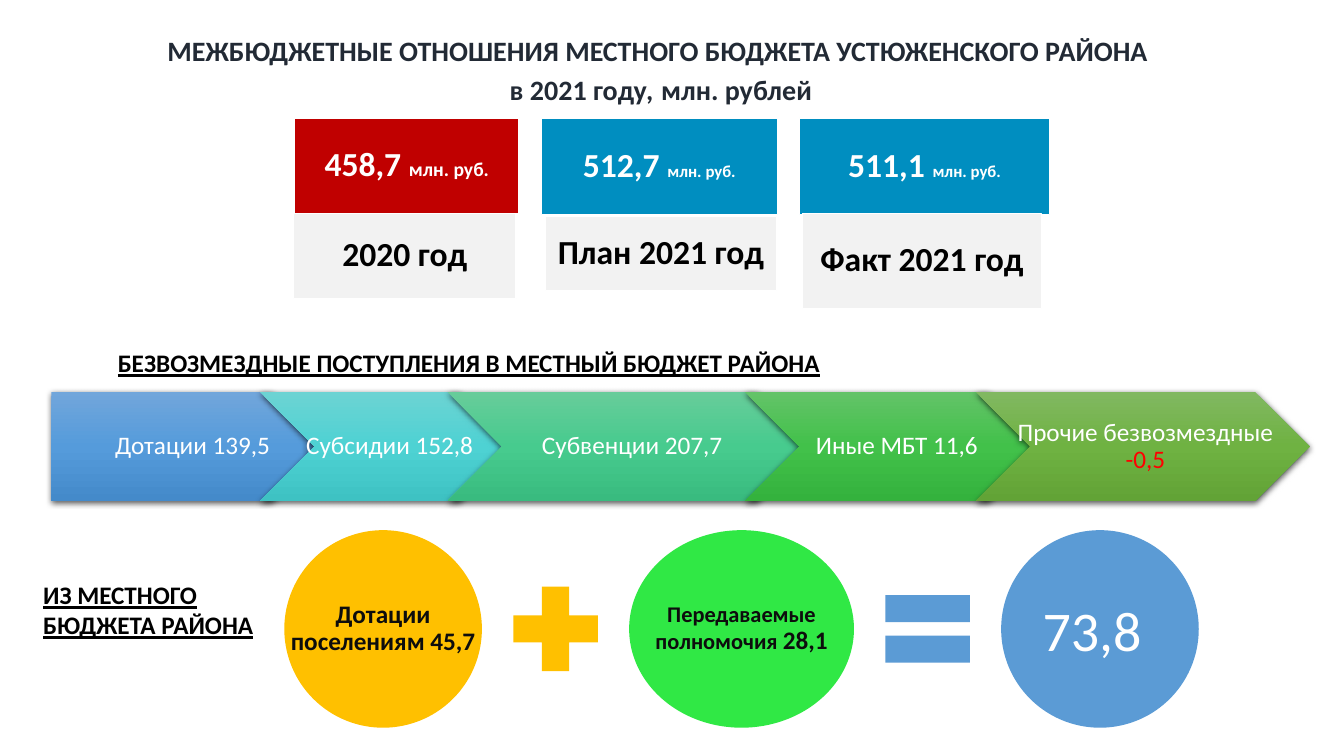
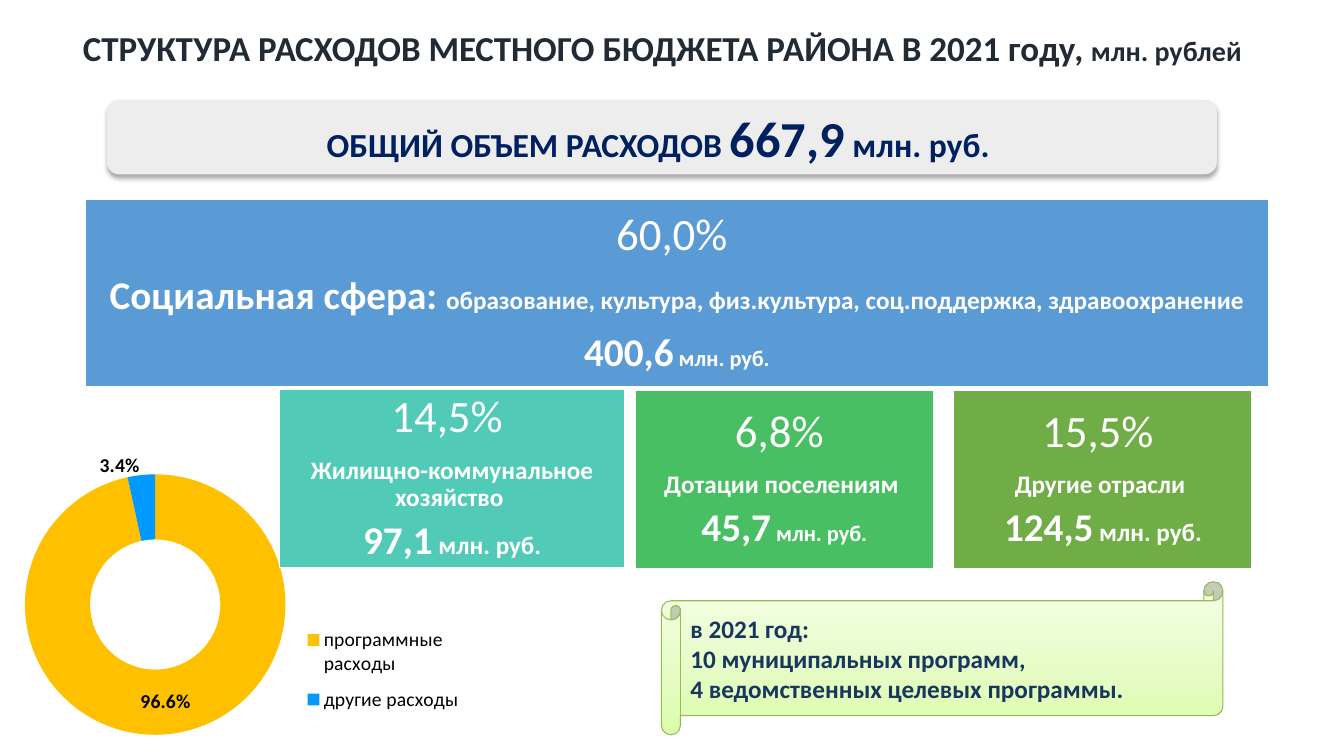
from dataclasses import dataclass

import lxml.etree
import pptx
import pptx.chart.data
import pptx.dml.color
import pptx.enum.chart
import pptx.enum.shapes
import pptx.enum.text
import pptx.oxml.ns
import pptx.util

Inches = pptx.util.Inches
Pt = pptx.util.Pt
SHAPE = pptx.enum.shapes.MSO_SHAPE
ALIGN = pptx.enum.text.PP_ALIGN
ANCHOR = pptx.enum.text.MSO_ANCHOR
qn = pptx.oxml.ns.qn

FONT = "Calibri"
WHITE = "FFFFFF"
BLACK = "000000"
TITLE_COLOR = "222A35"
BLUE = "5B9BD5"
AMBER = "FFC000"
MILLION = "млн. руб."


@dataclass
class Run:
    text: str
    size: float
    color: str = WHITE
    bold: bool = True
    underline: bool = False


def rgb(color):
    return pptx.dml.color.RGBColor.from_string(color)


def box(left, top, width, height):
    return Inches(left), Inches(top), Inches(width), Inches(height)


def add_element(parent, tag, **attributes):
    element = lxml.etree.SubElement(parent, qn(tag))
    for name, value in attributes.items():
        element.set(name, str(value))
    return element


def write(text_frame, paragraphs, align=ALIGN.CENTER, compact=False):
    """Fill a frame with lists of runs; compact is the tight diagram spacing."""
    for index, runs in enumerate(paragraphs):
        paragraph = text_frame.paragraphs[0] if index == 0 else text_frame.add_paragraph()
        paragraph.alignment = align
        if compact:
            paragraph.line_spacing = 0.9
            if index < len(paragraphs) - 1:
                paragraph.space_after = Pt(round(0.35 * max(run.size for run in runs)))
        for run in runs:
            for line_index, line in enumerate(run.text.split("\n")):
                if line_index:
                    paragraph.add_line_break()
                text_run = paragraph.add_run()
                text_run.text = line
                font = text_run.font
                font.name, font.size = FONT, Pt(run.size)
                font.bold, font.underline = run.bold, run.underline
                font.color.rgb = rgb(run.color)


def add_title(slide, position, paragraphs):
    title = slide.shapes.title
    title.left, title.top, title.width, title.height = box(*position)
    frame = title.text_frame
    frame.auto_size = pptx.enum.text.MSO_AUTO_SIZE.NONE
    frame.vertical_anchor = ANCHOR.TOP
    write(frame, paragraphs)


def add_heading(slide, position, lines):
    frame = slide.shapes.add_textbox(*box(*position)).text_frame
    frame.word_wrap = True
    write(frame, [[Run(line, 18, BLACK, underline=True)] for line in lines], ALIGN.LEFT)


def add_figure(slide, kind, position, fill=None, line=None, line_width=1):
    shape = slide.shapes.add_shape(kind, *box(*position))
    shape.shadow.inherit = False
    if fill:
        shape.fill.solid()
        shape.fill.fore_color.rgb = rgb(fill)
    if line:
        shape.line.color.rgb = rgb(line)
        shape.line.width = Pt(line_width)
    else:
        shape.line.fill.background()
    shape.text_frame.vertical_anchor = ANCHOR.MIDDLE
    return shape


def set_gradient(shape, stops, angle):
    gradient = lxml.etree.Element(qn("a:gradFill"), rotWithShape="1")
    stop_list = add_element(gradient, "a:gsLst")
    for position, color in stops:
        stop = add_element(stop_list, "a:gs", pos=position * 1000)
        add_element(stop, "a:srgbClr", val=color)
    add_element(gradient, "a:lin", ang=angle * 60000, scaled=0)
    shape.element.spPr.find(qn("a:prstGeom")).addnext(gradient)


def set_shadow(shape, opacity, blur, distance):
    """Drop a black shadow straight down."""
    effects = shape.element.spPr.find(qn("a:effectLst"))
    shadow = add_element(effects, "a:outerShdw", blurRad=Pt(blur), dist=Pt(distance),
                         dir=5400000, algn="ctr", rotWithShape=0)
    color = add_element(shadow, "a:srgbClr", val=BLACK)
    add_element(color, "a:alpha", val=opacity * 1000)


def set_margins(text_frame, margin):
    text_frame.margin_left = text_frame.margin_right = Inches(margin)
    text_frame.margin_top = text_frame.margin_bottom = Inches(margin)


def add_card(slide, position, fill, paragraphs, margin=0.1):
    card = add_figure(slide, SHAPE.RECTANGLE, position, fill, WHITE)
    set_margins(card.text_frame, margin)
    write(card.text_frame, paragraphs, compact=True)


def add_circle(slide, left, width, fill, runs):
    circle = add_figure(slide, SHAPE.OVAL, (left, 5.26, width, 1.96), fill)
    circle.text_frame.word_wrap = False
    set_margins(circle.text_frame, 0.03)
    write(circle.text_frame, [runs], compact=True)


def add_arrow(slide, kind, left, width, colors, runs, left_margin):
    arrow = add_figure(slide, kind, (left, 3.89, width, 1.08))
    set_gradient(arrow, zip((0, 50, 100), colors), 90)
    set_shadow(arrow, 63, 4.5, 1.5)
    frame = arrow.text_frame
    frame.word_wrap = False
    frame.margin_left, frame.margin_right = Inches(left_margin), Inches(0.03)
    write(frame, [runs], compact=True)


def set_layout(parent, index, target=None, **measures):
    """Place a chart part by fractions of the chart's size."""
    for old_layout in parent.findall(qn("c:layout")):
        parent.remove(old_layout)
    layout = lxml.etree.Element(qn("c:layout"))
    manual = add_element(layout, "c:manualLayout")
    if target:
        add_element(manual, "c:layoutTarget", val=target)
    if "w" in measures:
        add_element(manual, "c:xMode", val="edge")
        add_element(manual, "c:yMode", val="edge")
    for name, value in measures.items():
        add_element(manual, f"c:{name}", val=value)
    parent.insert(index, layout)


def add_program_chart(slide):
    data = pptx.chart.data.CategoryChartData(number_format="0.0%")
    data.categories = ["программные расходы", "другие расходы"]
    data.add_series("Series 1", (0.966, 0.034))
    chart = slide.shapes.add_chart(pptx.enum.chart.XL_CHART_TYPE.DOUGHNUT,
                                   *box(-0.15, 4.44, 4.97, 2.94), data).chart
    chart.has_title = False
    chart.font.name, chart.font.size = FONT, Pt(18)
    chart.font.color.rgb = rgb(BLACK)
    chart.plots[0].vary_by_categories = True
    series = chart.plots[0].series[0]
    for index, color in enumerate((AMBER, "0099FF")):
        point_format = series.points[index].format
        point_format.fill.solid()
        point_format.fill.fore_color.rgb = rgb(color)
        point_format.line.fill.background()
    labels = series.data_labels
    labels.show_value = True
    labels.show_percentage = False
    labels.number_format, labels.number_format_is_linked = "0.0%", False
    for font in (labels.font, series.points[1].data_label.font):
        font.name, font.size, font.bold = FONT, Pt(14), True
        font.color.rgb = rgb(BLACK)
    chart.has_legend = True
    legend = chart.legend
    legend.position = pptx.enum.chart.XL_LEGEND_POSITION.RIGHT
    legend.include_in_layout = False
    legend.font.name, legend.font.size = FONT, Pt(14)
    legend.font.color.rgb = rgb(BLACK)
    set_layout(chart.element.xpath(".//c:plotArea")[0], 0, "inner",
               x=0.08, y=0.09, w=0.52, h=0.88)
    set_layout(chart.element.xpath(".//c:legend")[0], 1, x=0.63, y=0.57, w=0.33, h=0.36)
    set_layout(chart.element.xpath(".//c:dLbl")[0], 1, x=-0.05, y=-0.14)


def build_transfers(slide):
    add_title(slide, (0.57, 0.28, 11.97, 0.84), [
        [Run("МЕЖБЮДЖЕТНЫЕ ОТНОШЕНИЯ МЕСТНОГО БЮДЖЕТА УСТЮЖЕНСКОГО РАЙОНА ", 20, TITLE_COLOR)],
        [Run("в 2021 году,", 20, TITLE_COLOR), Run(" ", 24, TITLE_COLOR),
         Run("млн. рублей", 20, TITLE_COLOR)]])

    amounts = [((2.92, 1.17, 2.23, 0.95), "C00000", "458,7 ", 14),
               ((5.37, 1.17, 2.34, 0.96), "008EC0", "512,7 ", 12),
               ((7.93, 1.17, 2.48, 0.96), "008EC0", "511,1 ", 12)]
    for position, fill, amount, unit_size in amounts:
        add_card(slide, position, fill, [[Run(amount, 24), Run(MILLION, unit_size)]])
    periods = [((2.91, 2.12, 2.21, 0.84), "2020 год"),
               ((5.41, 2.15, 2.29, 0.73), "План 2021 год"),
               ((7.96, 2.12, 2.37, 0.94), "Факт 2021 год")]
    for position, period in periods:
        add_card(slide, position, "F2F2F2", [[Run(period, 24, BLACK)]])

    add_heading(slide, (0.33, 5.7, 2.37, 0.71), ["ИЗ МЕСТНОГО", "БЮДЖЕТА РАЙОНА"])
    add_heading(slide, (1.07, 3.4, 7.84, 0.4),
                ["БЕЗВОЗМЕЗДНЫЕ ПОСТУПЛЕНИЯ В МЕСТНЫЙ БЮДЖЕТ РАЙОНА"])

    arrows = [(0.51, 2.73, ("71A6DB", "559BDB", "448ACA"), "Дотации 139,5"),
              (2.58, 2.52, ("6CD3D3", "4ED2D3", "3EC2C3"), "Субсидии 152,8"),
              (4.44, 3.61, ("67CC9A", "47CB8E", "39BB7F"), "Субвенции 207,7"),
              (7.39, 2.96, ("63C368", "42C14A", "34B23D"), "Иные МБТ 11,6"),
              (9.68, 3.31, ("81B861", "6FB242", "62A336"), "Прочие безвозмездные\n")]
    for index, (left, width, colors, label) in enumerate(arrows):
        kind, margin = (SHAPE.CHEVRON, 0.08) if index else (SHAPE.PENTAGON, 0.37)
        runs = [Run(label, 18, bold=False)]
        if index == len(arrows) - 1:
            runs.append(Run("-0,5", 18, "FF0000", bold=False))
        add_arrow(slide, kind, left, width, colors, runs, margin)

    add_circle(slide, 2.82, 1.96, AMBER, [Run("Дотации\nпоселениям 45,7", 18, "0D0D0D")])
    add_figure(slide, SHAPE.MATH_PLUS, (4.94, 5.67, 1.14, 1.14), AMBER)
    add_circle(slide, 6.24, 2.23, "30E845",
               [Run("Передаваемые\nполномочия ", 16, "0D0D0D"), Run("28,1", 18, "0D0D0D")])
    add_figure(slide, SHAPE.MATH_EQUAL, (8.63, 5.67, 1.14, 1.14), BLUE)
    add_circle(slide, 9.93, 1.96, BLUE, [Run("73,8", 40, bold=False), Run(" ", 50, bold=False)])


def build_expenses(slide):
    add_title(slide, (0, 0.21, 13.14, 0.52), [
        [Run("СТРУКТУРА РАСХОДОВ МЕСТНОГО БЮДЖЕТА РАЙОНА В 2021 году,", 25, TITLE_COLOR),
         Run(" ", 24, TITLE_COLOR), Run("млн. рублей", 20, TITLE_COLOR)]])

    total = add_figure(slide, SHAPE.ROUNDED_RECTANGLE, (1.06, 0.99, 11.01, 0.74), "EDEDED")
    set_shadow(total, 32, 3.5, 2.2)
    write(total.text_frame, [[Run("ОБЩИЙ ОБЪЕМ РАСХОДОВ ", 24, "002060"),
                              Run("667,9", 36, "002060"),
                              Run(f" {MILLION} ", 24, "002060")]])

    add_program_chart(slide)

    social = [Run("Социальная сфера: ", 28),
              Run("образование, культура, физ.культура, соц.поддержка, здравоохранение", 18)]
    sectors = [((0.85, 1.98, 11.73, 1.86), BLUE, "60,0% ", social, "400,6", 16),
               ((2.77, 3.86, 3.43, 1.77), "52CAB8", "14,5% ",
                [Run("Жилищно-коммунальное хозяйство ", 18)], "97,1", 18),
               ((6.3, 3.87, 2.96, 1.77), "49BF64", "6,8% ",
                [Run("Дотации поселениям ", 18)], "45,7", 16),
               ((9.46, 3.87, 2.96, 1.77), "70AD47", "15,5% ",
                [Run("Другие отрасли ", 18)], "124,5", 18)]
    for position, fill, share, sector, amount, unit_size in sectors:
        add_card(slide, position, fill, [
            [Run(share, 32, bold=False)], sector,
            [Run(amount, 28), Run(f" {MILLION}", unit_size)]], 0.13)

    scroll = add_figure(slide, SHAPE.HORIZONTAL_SCROLL, (6.56, 5.77, 5.57, 1.52),
                        line="98B955", line_width=0.75)
    set_gradient(scroll, [(0, "DAFDA7"), (35, "E4FCC2"), (100, "F5FFE7")], 270)
    lines = ["в 2021 год:", "10 муниципальных программ,", "4 ведомственных целевых программы."]
    write(scroll.text_frame, [[Run(line, 18, "17375E")] for line in lines], ALIGN.LEFT)


def main():
    presentation = pptx.Presentation()
    presentation.slide_width, presentation.slide_height = Inches(13.33), Inches(7.5)
    title_only = presentation.slide_layouts[5]
    for build in (build_transfers, build_expenses):
        build(presentation.slides.add_slide(title_only))
    presentation.save("out.pptx")


if __name__ == "__main__":
    main()
